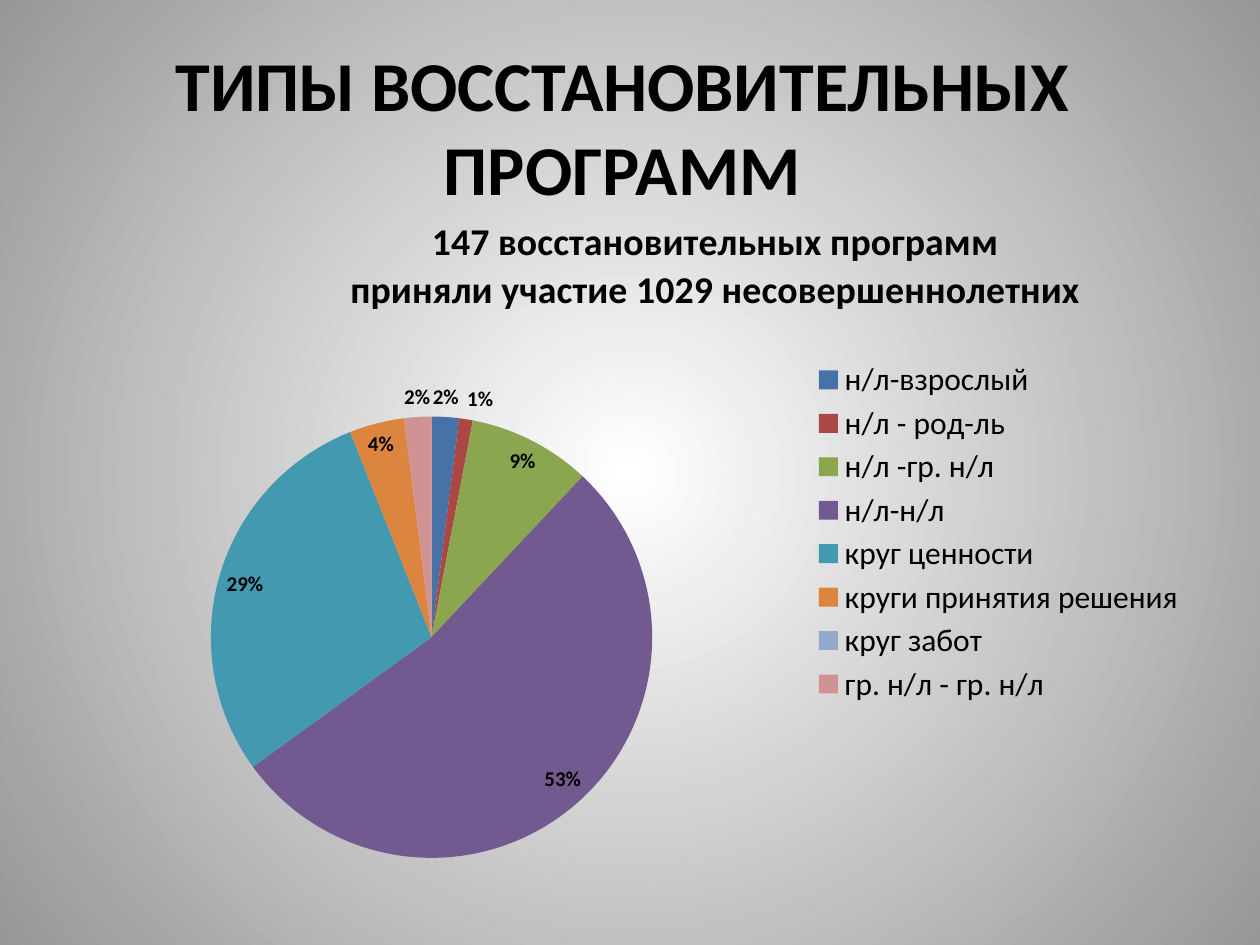
import pptx
import pptx.chart.data
import pptx.dml.color
import pptx.enum.chart
import pptx.enum.text
import pptx.oxml
import pptx.oxml.ns
import pptx.util

Pt = pptx.util.Pt
qn = pptx.oxml.ns.qn

COLORS = {"text": "000000", "center": "FFFFFF", "edge": "979797"}

# Category: (share, slice colour)
PROGRAMS = {
    "н/л-взрослый": (0.02, "4672A8"),
    "н/л - род-ль": (0.01, "AB4744"),
    "н/л -гр. н/л": (0.09, "8AA64F"),
    "н/л-н/л": (0.53, "725990"),
    "круг ценности": (0.29, "4299B0"),
    "круги принятия решения": (0.04, "DC853E"),
    "круг забот": (0, "93A9CE"),
    "гр. н/л - гр. н/л": (0.02, "D09392"),
}


def rgb(value):
    return pptx.dml.color.RGBColor.from_string(value)


class Deck:
    """Holds the style and the current slide."""

    font = "Calibri"

    def __init__(self, width, height):
        self.prs = pptx.Presentation()
        self.prs.slide_width, self.prs.slide_height = Pt(width), Pt(height)
        self.s = self.prs.slides.add_slide(self.prs.slide_layouts[6])

    def style(self, font, size, bold=False):
        font.name, font.size, font.bold = self.font, Pt(size), bold
        font.color.rgb = rgb(COLORS["text"])

    def background(self, center, edge):
        fill = self.s.background.fill
        fill.gradient()
        for stop, color, position in zip(fill.gradient_stops, (center, edge), (0, 1)):
            stop.color.rgb = rgb(color)
            stop.position = position
        # Turn the linear gradient into a radial one
        lin = next(self.s.element.iter(qn("a:lin")))
        lin.getparent().replace(lin, pptx.oxml.parse_xml(
            f'<a:path {pptx.oxml.ns.nsdecls("a")} path="circle">'
            '<a:fillToRect l="50000" t="50000" r="50000" b="50000"/></a:path>'))

    def heading(self, text, box, size):
        tf = self.s.shapes.add_textbox(*map(Pt, box)).text_frame
        tf.word_wrap = True
        tf.vertical_anchor = pptx.enum.text.MSO_ANCHOR.MIDDLE
        p = tf.paragraphs[0]
        p.text = text
        p.alignment = pptx.enum.text.PP_ALIGN.CENTER
        self.style(p.runs[0].font, size, bold=True)

    def place(self, chart, tag, index, x, y, w=None, h=None, inner=False):
        """Set a manual layout, in fractions of the chart."""
        area = next(chart.element.iter(qn(tag)))
        for old in area.findall(qn("c:layout")):
            area.remove(old)
        values = {"layoutTarget": "inner" if inner else None, "xMode": "edge",
                  "yMode": "edge", "x": x, "y": y, "w": w, "h": h}
        items = "".join(f'<c:{k} val="{v}"/>' for k, v in values.items() if v is not None)
        area.insert(index, pptx.oxml.parse_xml(
            f'<c:layout {pptx.oxml.ns.nsdecls("c")}>'
            f'<c:manualLayout>{items}</c:manualLayout></c:layout>'))

    def pie(self, lines, programs, box):
        data = pptx.chart.data.CategoryChartData(number_format="0%")
        data.categories = list(programs)
        data.add_series("Series 1", [share for share, color in programs.values()])
        chart = self.s.shapes.add_chart(
            pptx.enum.chart.XL_CHART_TYPE.PIE, *map(Pt, box), data).chart
        self.style(chart.font, 18)

        # Chart title
        tf = chart.chart_title.text_frame
        tf.text = "\n".join(lines)
        for p in tf.paragraphs:
            self.style(p.runs[0].font, 21.6, bold=True)
        chart.chart_title.include_in_layout = False
        self.place(chart, "c:title", 1, 0.25, 0.03)

        # Slices and labels; the number format hides the zero
        plot = chart.plots[0]
        plot.vary_by_categories = True
        for i, (share, color) in enumerate(programs.values()):
            fill = plot.series[0].points[i].format.fill
            fill.solid()
            fill.fore_color.rgb = rgb(color)
        plot.has_data_labels = True
        labels = plot.data_labels
        labels.show_value, labels.show_percentage = True, False
        labels.number_format, labels.number_format_is_linked = "0%;;", False
        labels.position = pptx.enum.chart.XL_LABEL_POSITION.BEST_FIT
        self.style(labels.font, 12, bold=True)
        self.place(chart, "c:plotArea", 0, 0.13, 0.33, 0.39, 0.65, inner=True)

        # Legend
        chart.has_legend = True
        chart.legend.position = pptx.enum.chart.XL_LEGEND_POSITION.RIGHT
        chart.legend.include_in_layout = False
        self.style(chart.legend.font, 18)
        self.place(chart, "c:legend", 1, 0.66, 0.24, 0.33, 0.52)


def main():
    deck = Deck(720, 540)
    deck.background(COLORS["center"], COLORS["edge"])
    deck.heading("ТИПЫ ВОССТАНОВИТЕЛЬНЫХ ПРОГРАММ", (42, 18, 627, 108), 40)
    deck.pie(["147 восстановительных программ",
              "приняли участие 1029 несовершеннолетних"],
             PROGRAMS, (36, 110, 648, 388))
    deck.prs.save("out.pptx")


if __name__ == "__main__":
    main()
